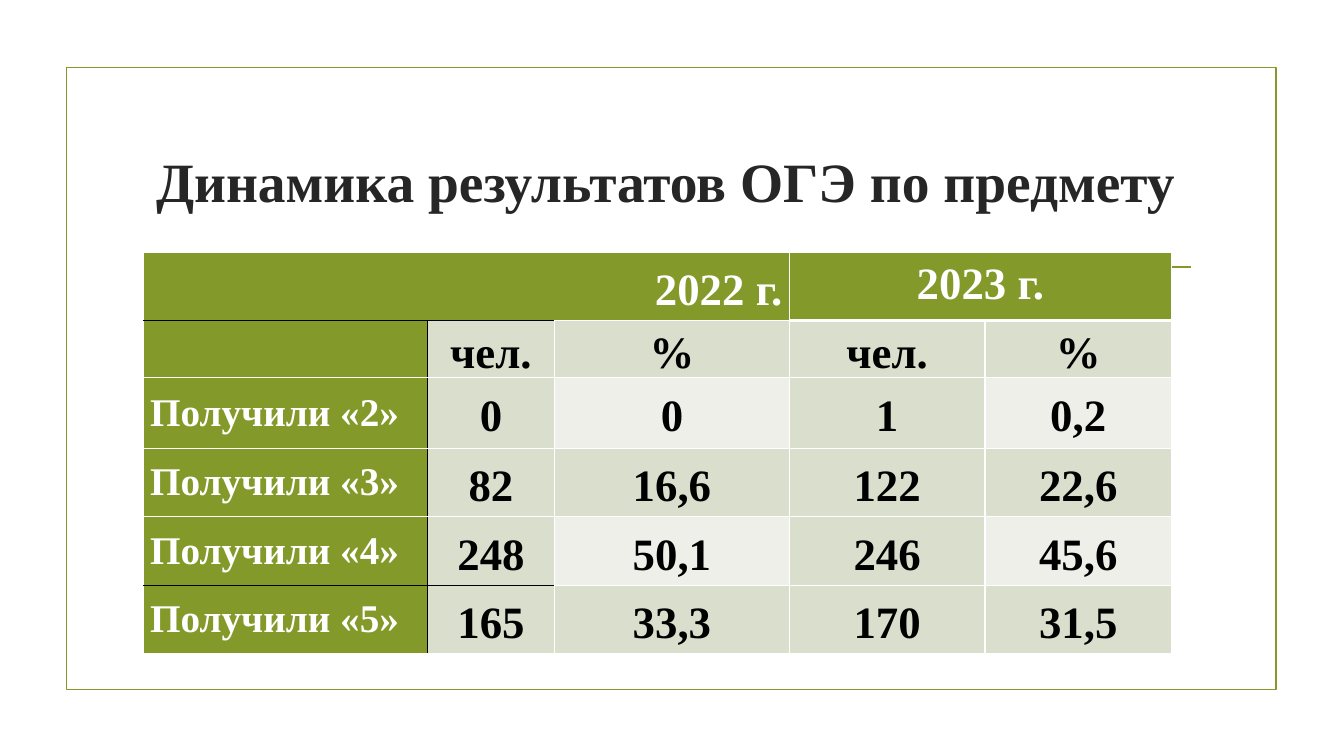
"""Build the slide with the exam results table for 2022 and 2023."""
import pptx
import pptx.dml.color
import pptx.enum.shapes
import pptx.enum.text
import pptx.oxml
import pptx.oxml.ns
import pptx.util

Inches = pptx.util.Inches
ALIGN = pptx.enum.text.PP_ALIGN
ANCHOR = pptx.enum.text.MSO_ANCHOR

TITLE = "Динамика результатов ОГЭ по предмету "
ROWS = [
    ["2022 г.", "", "", "2023 г.", ""],
    ["", "чел.", "%", "чел.", "%"],
    ["Получили «2»", "0", "0", "1", "0,2"],
    ["Получили «3»", "82", "16,6", "122", "22,6"],
    ["Получили «4»", "248", "50,1", "246", "45,6"],
    ["Получили «5»", "165", "33,3", "170", "31,5"],
]
COL_WIDTHS = [2.82, 1.26, 2.33, 1.94, 1.85]
ROW_HEIGHTS = [0.68, 0.54, 0.7, 0.68, 0.68, 0.68]
HEADER_SPANS = [(0, 2), (3, 4)]
COLORS = {
    "green": "83992A",
    "title": "262626",
    "band": "D9DECD",
    "light": "EDEFE8",
    "white": "FFFFFF",
    "black": "000000",
}
FONT = "Times New Roman"


def rgb(name):
    return pptx.dml.color.RGBColor.from_string(COLORS[name])


def add_text(tf, text, size=32, color="black", align=ALIGN.CENTER, spacing=None):
    p = tf.paragraphs[0]
    p.alignment = align
    if spacing:
        p.line_spacing = spacing
    r = p.add_run()
    r.text = text
    r.font.name = FONT
    r.font.size = pptx.util.Pt(size)
    r.font.bold = True
    r.font.color.rgb = rgb(color)


def no_effects(sp):
    sp._element.spPr.append(pptx.oxml.parse_xml(
        f"<a:effectLst {pptx.oxml.ns.nsdecls('a')}/>"))


def horizontal_edge(edge, col):
    if edge in (1, 5) and col < 2:
        return "black", 1
    return "white", 3 if edge == 1 and col > 2 else 1


def vertical_edge(edge, row):
    return ("black" if edge == 1 and row > 0 else "white"), 1


def set_borders(cell, row, col):
    edges = {
        "lnL": vertical_edge(col, row),
        "lnR": vertical_edge(col + 1, row),
        "lnT": horizontal_edge(row, col),
        "lnB": horizontal_edge(row + 1, col),
    }
    tc_pr = cell._tc.get_or_add_tcPr()
    for i, (tag, (color, width)) in enumerate(edges.items()):
        tc_pr.insert(i, pptx.oxml.parse_xml(
            f'<a:{tag} {pptx.oxml.ns.nsdecls("a")} w="{pptx.util.Pt(width)}">'
            f'<a:solidFill><a:srgbClr val="{COLORS[color]}"/></a:solidFill></a:{tag}>'))


def cell_fill(row, col):
    if row == 0 or col == 0:
        return "green"
    return "light" if row in (2, 4) and col in (2, 4) else "band"


def fill_cell(cell, row, col, text):
    cell.margin_left = cell.margin_right = Inches(0.07)
    cell.margin_top = cell.margin_bottom = 0
    cell.vertical_anchor = ANCHOR.TOP if row == 0 and col == 3 else ANCHOR.MIDDLE
    cell.fill.solid()
    cell.fill.fore_color.rgb = rgb(cell_fill(row, col))
    set_borders(cell, row, col)
    if not text:
        return
    if row == 0:
        align = ALIGN.RIGHT if col == 0 else ALIGN.CENTER
        add_text(cell.text_frame, text, color="white", align=align, spacing=1.15)
    elif col == 0:
        add_text(cell.text_frame, text, size=28, color="white", align=ALIGN.LEFT)
    else:
        add_text(cell.text_frame, text, spacing=1.15)


def add_results_table(slide):
    frame = slide.shapes.add_table(
        len(ROWS), len(COL_WIDTHS), Inches(1.42), Inches(2.5),
        Inches(sum(COL_WIDTHS)), Inches(sum(ROW_HEIGHTS)))
    table = frame.table
    for column, width in zip(table.columns, COL_WIDTHS):
        column.width = Inches(width)
    for table_row, height in zip(table.rows, ROW_HEIGHTS):
        table_row.height = Inches(height)
    for first, last in HEADER_SPANS:
        table.cell(0, first).merge(table.cell(0, last))
    for row, texts in enumerate(ROWS):
        for col, text in enumerate(texts):
            fill_cell(table.cell(row, col), row, col, text)


def main():
    prs = pptx.Presentation()
    prs.slide_width, prs.slide_height = Inches(13.33), Inches(7.5)
    slide = prs.slides.add_slide(prs.slide_layouts[5])

    border = slide.shapes.add_shape(
        pptx.enum.shapes.MSO_SHAPE.RECTANGLE,
        Inches(0.66), Inches(0.67), Inches(12), Inches(6.17))
    border.shadow.inherit = False
    border.fill.background()
    rule = slide.shapes.add_connector(
        pptx.enum.shapes.MSO_CONNECTOR.STRAIGHT,
        Inches(1.53), Inches(2.65), Inches(11.81), Inches(2.65))
    no_effects(rule)
    for sp in (border, rule):
        sp.line.color.rgb = rgb("green")
        sp.line.width = pptx.util.Pt(1.25)

    title = slide.shapes.title
    title.left, title.top = Inches(1.42), Inches(1.07)
    title.width, title.height = Inches(10.5), Inches(1.43)
    tf = title.text_frame
    tf.word_wrap = True
    tf.auto_size = pptx.enum.text.MSO_AUTO_SIZE.NONE
    tf.vertical_anchor = ANCHOR.MIDDLE
    add_text(tf, TITLE, size=39.6, color="title")

    add_results_table(slide)
    prs.save("out.pptx")


if __name__ == "__main__":
    main()
